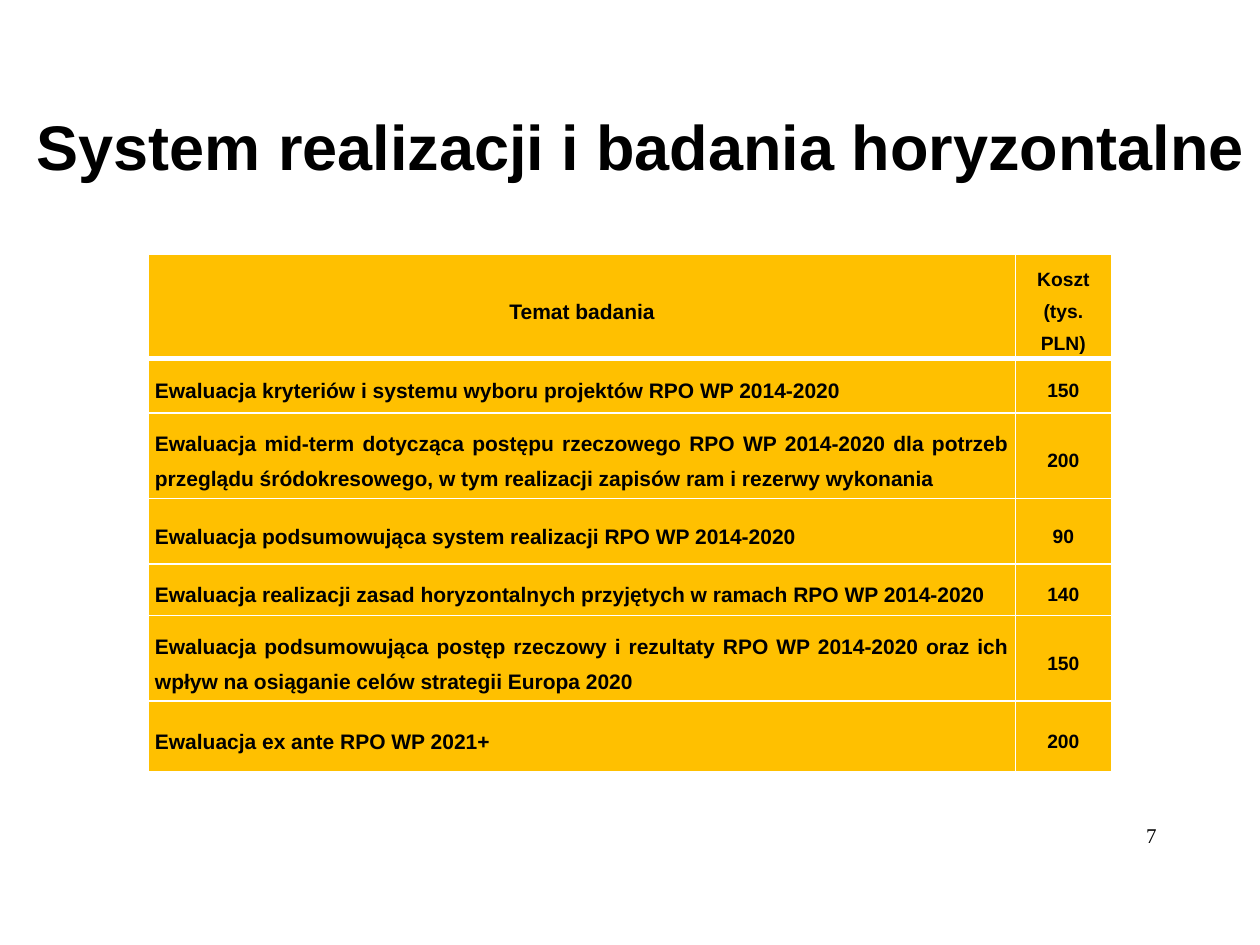
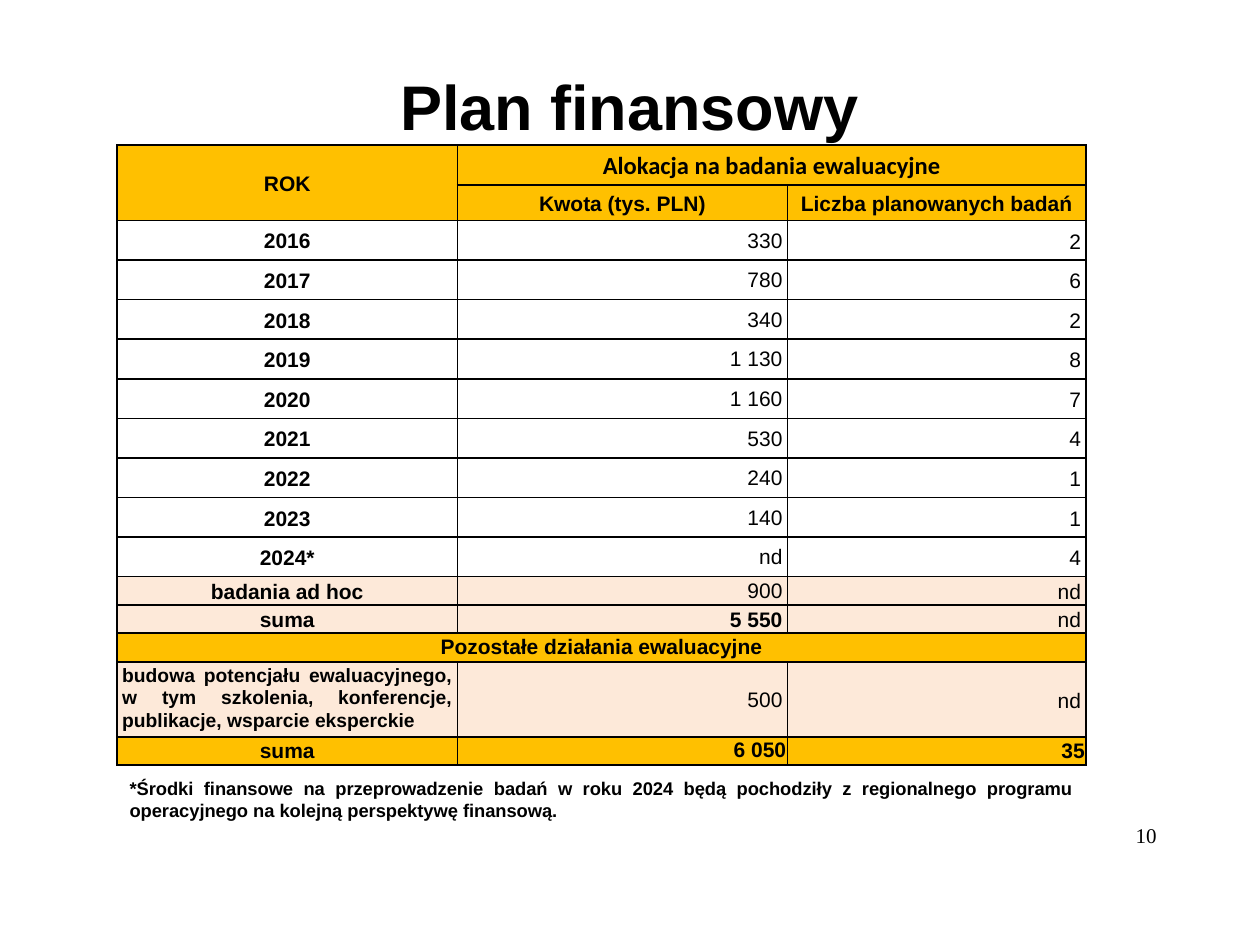
"""Builds two evaluation plan slides: horizontal studies and the financial plan."""
from lxml import etree
from pptx import Presentation
from pptx import util as u
from pptx.dml.color import RGBColor
from pptx.enum import text
from pptx.oxml import ns

Inches, Pt = u.Inches, u.Pt
LEFT, CENTER, RIGHT, JUSTIFY = (text.PP_ALIGN.LEFT, text.PP_ALIGN.CENTER,
                                text.PP_ALIGN.RIGHT, text.PP_ALIGN.JUSTIFY)
TOP, MIDDLE = text.MSO_ANCHOR.TOP, text.MSO_ANCHOR.MIDDLE
BLACK = RGBColor(0x00, 0x00, 0x00)
WHITE = RGBColor(0xFF, 0xFF, 0xFF)
GOLD = RGBColor(0xFF, 0xC0, 0x00)
PEACH = RGBColor(0xFD, 0xE9, 0xD9)


def write(tf, words, size, align, spacing=None, bold=True, font="Arial"):
    tf.text = words
    tf.word_wrap = True
    p = tf.paragraphs[0]
    p.alignment = align
    p.line_spacing = spacing
    r = p.runs[0]
    r.font.name = font
    r.font.size = Pt(size)
    r.font.bold = bold
    r.font.color.rgb = BLACK


def style_cell(cell, fill, line, margins, anchor=MIDDLE, top=1, bottom=1):
    (cell.margin_left, cell.margin_top,
     cell.margin_right, cell.margin_bottom) = [Inches(m) for m in margins]
    cell.vertical_anchor = anchor
    if fill is None:
        cell.fill.background()
    else:
        cell.fill.solid()
        cell.fill.fore_color.rgb = fill
    tc_pr = cell._tc.get_or_add_tcPr()
    sides = (("lnL", 1), ("lnR", 1), ("lnT", top), ("lnB", bottom))
    for i, (side, width) in enumerate(sides):
        ln = etree.Element(ns.qn("a:" + side), w=str(Pt(width)))
        solid = etree.SubElement(ln, ns.qn("a:solidFill"))
        etree.SubElement(solid, ns.qn("a:srgbClr"), val=str(line))
        tc_pr.insert(i, ln)


prs = Presentation()
prs.slide_width, prs.slide_height = Inches(10), Inches(7.5)

studies = [
    ("Temat badania", "Koszt (tys. PLN)"),
    ("Ewaluacja kryteriów i systemu wyboru projektów RPO WP 2014-2020", "150"),
    ("Ewaluacja mid-term dotycząca postępu rzeczowego RPO WP 2014-2020 dla potrzeb "
     "przeglądu śródokresowego, w tym realizacji zapisów ram i rezerwy wykonania", "200"),
    ("Ewaluacja podsumowująca system realizacji RPO WP 2014-2020", "90"),
    ("Ewaluacja realizacji zasad horyzontalnych przyjętych w ramach RPO WP 2014-2020", "140"),
    ("Ewaluacja podsumowująca postęp rzeczowy i rezultaty RPO WP 2014-2020 oraz ich "
     "wpływ na osiąganie celów strategii Europa 2020", "150"),
    ("Ewaluacja ex ante RPO WP 2021+", "200"),
]
budget = [
    ("ROK", "Alokacja na badania ewaluacyjne", ""),
    ("", "Kwota (tys. PLN)", "Liczba planowanych badań"),
    ("2016", "330", "2"),
    ("2017", "780", "6"),
    ("2018", "340", "2"),
    ("2019", "1 130", "8"),
    ("2020", "1 160", "7"),
    ("2021", "530", "4"),
    ("2022", "240", "1"),
    ("2023", "140", "1"),
    ("2024*", "nd", "4"),
    ("badania ad hoc", "900", "nd"),
    ("suma", "5 550", "nd"),
    ("Pozostałe działania ewaluacyjne", "", ""),
    ("budowa potencjału ewaluacyjnego, w tym szkolenia, konferencje, publikacje, "
     "wsparcie eksperckie", "500", "nd"),
    ("suma", "6 050", "35"),
]
pages = [
    ("System realizacji i badania horyzontalne", (0.28, 0.57, 9.61, 1.23), "7",
     studies, (1.18, 2.02), [6.88, 0.76], [0.73, 0.43, 0.68, 0.52, 0.41, 0.68, 0.56]),
    ("Plan finansowy", (0.8, 0.57, 8.39, 0.6), "10",
     budget, (0.93, 1.15), [2.7, 2.62, 2.37],
     [0.32, 0.28] + [2.83 / 9] * 9 + [0.21, 0.21, 0.23, 0.57, 0.22]),
]

tables = []
for title, title_box, number, rows, corner, widths, heights in pages:
    s = prs.slides.add_slide(prs.slide_layouts[6])
    labels = [
        (title, title_box, 36, CENTER, 0.93, True, "Arial", MIDDLE),
        (number, (7.02, 6.54, 2.16, 0.46), 12, RIGHT, 0.95, False, "Times New Roman", TOP),
    ]
    for words, box, size, align, spacing, bold, font, anchor in labels:
        tf = s.shapes.add_textbox(*[Inches(v) for v in box]).text_frame
        tf.margin_left = tf.margin_top = tf.margin_right = tf.margin_bottom = 0
        tf.vertical_anchor = anchor
        write(tf, words, size, align, spacing, bold, font)
    frame = s.shapes.add_table(len(rows), len(widths), *[Inches(v) for v in corner],
                               Inches(sum(widths)), Inches(sum(heights)))
    table = frame.table
    table.first_row = table.horz_banding = False
    for column, width in zip(table.columns, widths):
        column.width = Inches(width)
    for row, height in zip(table.rows, heights):
        row.height = Inches(height)
    tables.append(table)

study_table, budget_table = tables

for i, row in enumerate(studies):
    for j, words in enumerate(row):
        cell = study_table.cell(i, j)
        align = JUSTIFY if i and j == 0 else CENTER
        write(cell.text_frame, words, 11 if j else 12, align, 1.5)
        style_cell(cell, GOLD, WHITE, (0.05, 0, 0.05, 0),
                   top=3 if i == 1 else 1, bottom=3 if i == 0 else 1)

YEARS = range(2, 11)
SUBTOTAL, OTHER, CAPACITY, TOTAL = 12, 13, 14, 15
for i, row in enumerate(budget):
    header = i < 2
    fill = None if i in YEARS else GOLD if header or i in (OTHER, TOTAL) else PEACH
    for j, words in enumerate(row):
        cell = budget_table.cell(i, j)
        amount = j > 0 and not header
        side = 0.01 if amount and i == TOTAL else 0.04
        anchor = TOP if i in (OTHER, TOTAL) or (i == CAPACITY and j == 0) else MIDDLE
        style_cell(cell, fill, BLACK, (side, 0.01, side, 0), anchor)
        if not words:
            continue
        bold = not amount or i == TOTAL or (i, j) == (SUBTOTAL, 1)
        size, font, align, spacing = 12, "Arial", CENTER, 1.06
        if amount:
            align, spacing = RIGHT, 1.07 if j == 2 else None
        elif (i, j) == (0, 1):
            size, font = 14, "Calibri"
        elif i == CAPACITY:
            size, align = 11, JUSTIFY
        write(cell.text_frame, words, size, align, spacing, bold, font)

for first, last in (((0, 0), (1, 0)), ((0, 1), (0, 2)), ((OTHER, 0), (OTHER, 2))):
    budget_table.cell(*first).merge(budget_table.cell(*last))

note = s.shapes.add_textbox(Inches(0.93), Inches(6.12), Inches(7.69), Inches(0.45))
write(note.text_frame,
      "*Środki finansowe na przeprowadzenie badań w roku 2024 będą pochodziły z regionalnego "
      "programu operacyjnego na kolejną perspektywę finansową.", 10.5, JUSTIFY)

prs.save("out.pptx")
